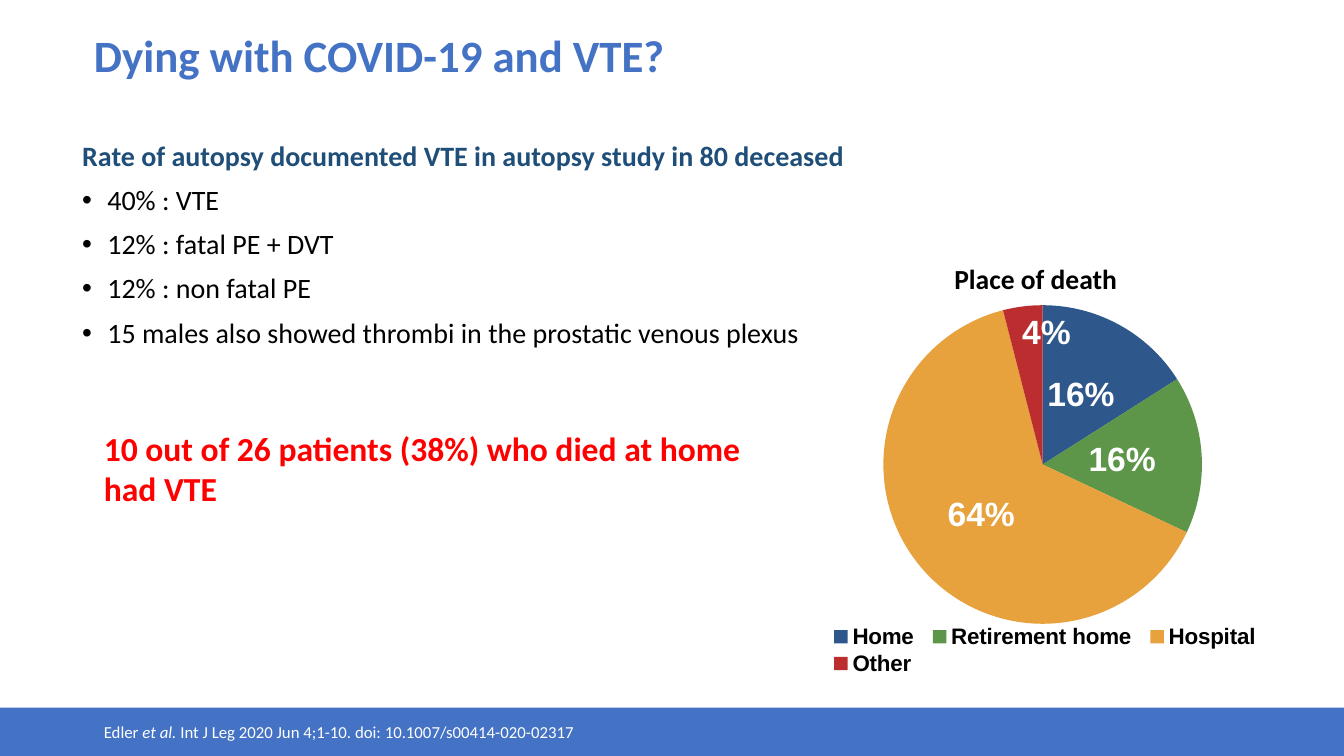
from dataclasses import dataclass

from lxml.etree import SubElement
from pptx import Presentation
from pptx.chart.data import CategoryChartData
from pptx.dml.color import RGBColor
from pptx.enum.chart import XL_CHART_TYPE as ChartType
from pptx.enum.chart import XL_LABEL_POSITION as LabelPosition
from pptx.enum.chart import XL_LEGEND_POSITION as LegendPosition
from pptx.enum.shapes import MSO_SHAPE as Preset
from pptx.enum.text import MSO_ANCHOR as Anchor
from pptx.enum.text import MSO_AUTO_SIZE as AutoSize
from pptx.oxml.ns import qn
from pptx.util import Pt

BLUE, NAVY, RED, BLACK, WHITE = "4472C4", "1F4E79", "FF0000", "000000", "FFFFFF"
PAGE_WIDTH, PAGE_HEIGHT, BAND_HEIGHT = 960, 540, 34.5


@dataclass
class Span:
    text: str
    italic: bool = False


@dataclass
class Para:
    spans: list[Span]
    size: float
    color: str
    bold: bool = False
    bullet: bool = False
    spacing: float = 1.0
    before: float = 0


@dataclass
class TextBlock:
    left: float
    top: float
    width: float
    height: float
    paras: list[Para]
    anchor: Anchor = Anchor.MIDDLE
    inset_x: float = 2.9
    inset_y: float = 2.9
    wrap: bool = True


@dataclass
class Slice:
    label: str
    share: float
    color: str
    label_shift: tuple[float, float] | None = None


def rgb(value: str) -> RGBColor:
    return RGBColor.from_string(value)


def style_font(font, name: str, size: float, color: str, bold: bool) -> None:
    font.name, font.size, font.bold = name, Pt(size), bold
    font.color.rgb = rgb(color)


def add_bullet(paragraph, indent: float = 18) -> None:
    properties = paragraph._p.get_or_add_pPr()
    properties.set("marL", str(Pt(indent)))
    properties.set("indent", str(Pt(-indent)))
    SubElement(properties, qn("a:buFont")).set("typeface", "Arial")
    SubElement(properties, qn("a:buChar")).set("char", "•")


def add_text(page, block: TextBlock) -> None:
    box = page.shapes.add_textbox(
        Pt(block.left), Pt(block.top), Pt(block.width), Pt(block.height))
    frame = box.text_frame
    frame.word_wrap = block.wrap
    if not block.wrap:
        frame.auto_size = AutoSize.SHAPE_TO_FIT_TEXT
    frame.vertical_anchor = block.anchor
    frame.margin_left = frame.margin_right = Pt(block.inset_x)
    frame.margin_top = frame.margin_bottom = Pt(block.inset_y)
    for index, para in enumerate(block.paras):
        paragraph = frame.add_paragraph() if index else frame.paragraphs[0]
        paragraph.line_spacing = para.spacing
        if index:
            paragraph.space_before = Pt(para.before)
        if para.bullet:
            add_bullet(paragraph)
        style_font(paragraph.font, "Calibri", para.size, para.color, para.bold)
        for span in para.spans:
            run = paragraph.add_run()
            run.text = span.text
            if span.italic:
                run.font.italic = True


def make_layout(parent, **settings: str | float):
    """Give a chart part a manual place, in fractions of the chart."""
    for old in parent.findall(qn("c:layout")):
        parent.remove(old)
    layout = SubElement(parent, qn("c:layout"))
    manual = SubElement(layout, qn("c:manualLayout"))
    for tag, value in settings.items():
        SubElement(manual, qn(f"c:{tag}")).set("val", str(value))
    return layout


def shift_label(point, shift: tuple[float, float]) -> None:
    """Move one percentage label away from its default place."""
    label = point.data_label
    style_font(label.font, "Arial", 24, WHITE, True)
    label.position = LabelPosition.CENTER
    element = label._dLbl
    element.find(qn("c:showVal")).set("val", "0")
    element.find(qn("c:showPercent")).set("val", "1")
    across, down = shift
    element.find(qn("c:idx")).addnext(make_layout(element, x=across, y=down))


def add_pie(page, slices: list[Slice]) -> None:
    data = CategoryChartData()
    data.categories = [part.label for part in slices]
    data.add_series("Place of death", [part.share for part in slices])
    chart = page.shapes.add_chart(
        ChartType.PIE, Pt(581), Pt(216.7), Pt(327.6), Pt(267.8), data).chart
    chart.has_title = False
    style_font(chart.font, "Arial", 10, BLACK, False)

    plot = chart.plots[0]
    plot.vary_by_categories = True
    series = plot.series[0]
    labels = series.data_labels
    labels.show_percentage, labels.show_value = True, False
    labels.number_format, labels.number_format_is_linked = "#,##0%", False
    labels.position = LabelPosition.CENTER
    style_font(labels.font, "Arial", 24, WHITE, True)
    for leader in labels._element.findall(qn("c:showLeaderLines")):
        leader.set("val", "0")

    for index, part in enumerate(slices):
        point = series.points[index]
        point.format.fill.solid()
        point.format.fill.fore_color.rgb = rgb(part.color)
        if part.label_shift:
            shift_label(point, part.label_shift)

    chart.has_legend = True
    legend = chart.legend
    legend.position = LegendPosition.BOTTOM
    legend.include_in_layout = False
    style_font(legend.font, "Arial", 16, BLACK, True)

    area = chart._chartSpace.chart.plotArea
    area.insert(0, make_layout(area, layoutTarget="inner", xMode="edge",
                               yMode="edge", x=0.005, y=0.005, w=0.99, h=0.85))
    key = legend._element
    key.find(qn("c:legendPos")).addnext(make_layout(
        key, xMode="edge", yMode="edge", x=0.02, y=0.85, w=0.97, h=0.15))


FINDINGS = [
    "40% : VTE",
    "12% : fatal PE + DVT",
    "12% : non fatal PE",
    "15 males also showed thrombi in the prostatic venous plexus",
]

TITLE = TextBlock(
    60, 2, 828, 60.5,
    [Para([Span("Dying with COVID-19 and VTE?")], 32, BLUE, True, spacing=0.9)],
    Anchor.BOTTOM, 7.2, 3.6)
RATES = TextBlock(
    51.6, 97.9, 694, 213,
    [Para([Span("Rate of autopsy documented VTE in autopsy study in 80 deceased")],
          20, NAVY, True, spacing=0.9)]
    + [Para([Span(text)], 20, BLACK, bullet=True, spacing=0.9, before=10)
       for text in FINDINGS],
    Anchor.TOP, 7.2, 3.6)
KEY_MESSAGE = TextBlock(
    71.3, 302.4, 473, 63.4,
    [Para([Span("10 out of 26 patients (38%) who died at home had VTE")],
          24, RED, True)])
CITATION = TextBlock(
    71.3, 512.6, 360, 20.2,
    [Para([Span("Edler "), Span("et al. ", italic=True),
           Span("Int J Leg 2020 Jun 4;1-10. doi: 10.1007/s00414-020-02317")],
          12, WHITE)])
CHART_HEADING = TextBlock(
    679.5, 185, 122, 28,
    [Para([Span("Place of death")], 19.7, BLACK, True)],
    inset_x=2.2, inset_y=2.2, wrap=False)

PLACES = [
    Slice("Home", 16, "2E578C"),
    Slice("Retirement home", 16, "5D9648"),
    Slice("Hospital", 64, "E7A13D"),
    Slice("Other", 4, "BC2D30", label_shift=(0.03, -0.14)),
]


def main() -> None:
    deck = Presentation()
    deck.slide_width, deck.slide_height = Pt(PAGE_WIDTH), Pt(PAGE_HEIGHT)
    page = deck.slides.add_slide(deck.slide_layouts[6])

    # Footer band
    band = page.shapes.add_shape(
        Preset.RECTANGLE, 0, Pt(PAGE_HEIGHT - BAND_HEIGHT),
        Pt(PAGE_WIDTH), Pt(BAND_HEIGHT))
    band.shadow.inherit = False
    band.fill.solid()
    band.fill.fore_color.rgb = rgb(BLUE)
    band.line.fill.background()

    # Text and chart
    for block in (TITLE, RATES, KEY_MESSAGE, CITATION):
        add_text(page, block)
    add_pie(page, PLACES)
    add_text(page, CHART_HEADING)

    deck.save("out.pptx")


if __name__ == "__main__":
    main()
